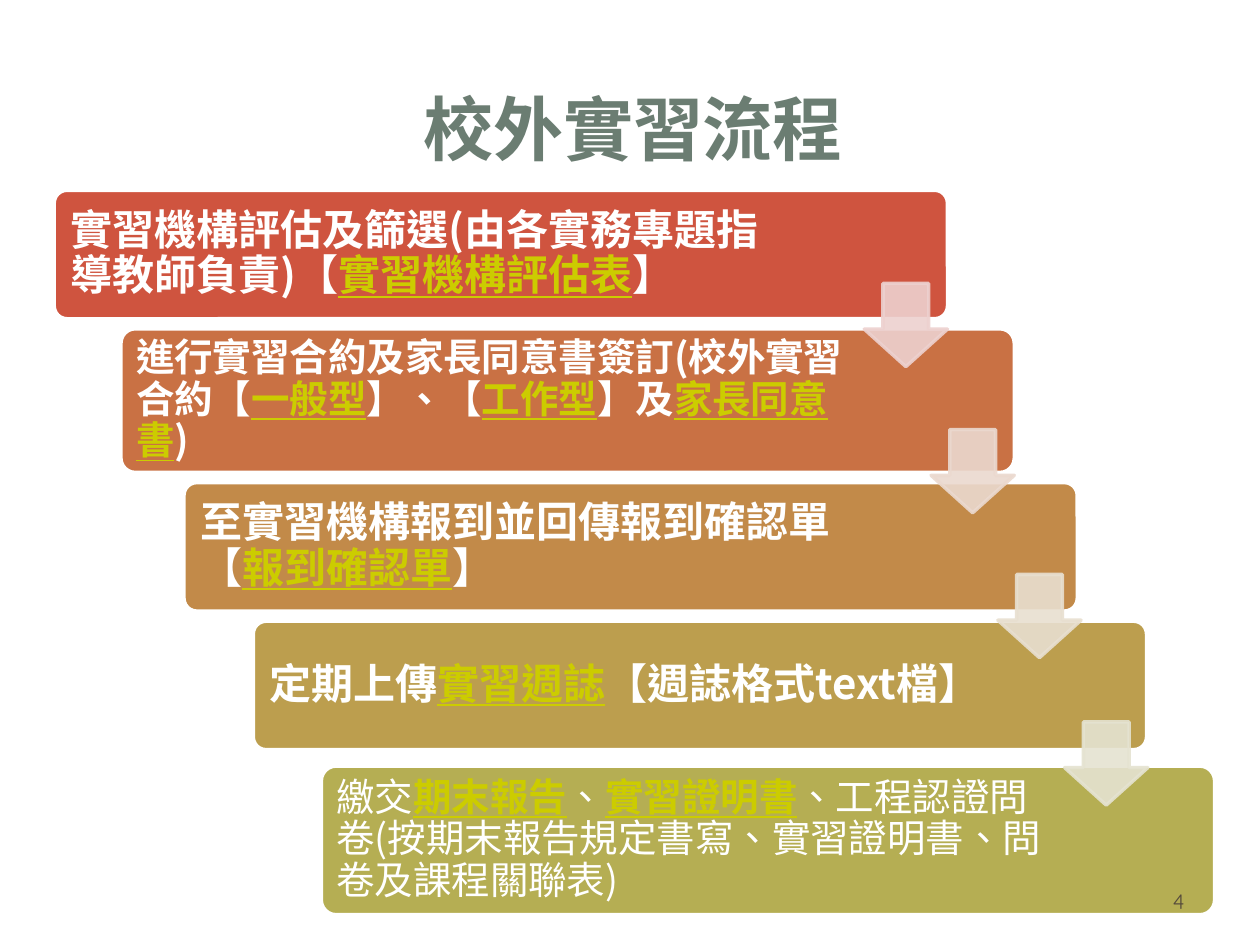
from lxml import etree
from pptx import Presentation
from pptx.dml.color import RGBColor
from pptx.enum import lang, shapes, text
from pptx.oxml import ns
from pptx.util import Inches, Pt

CJK_FONT = "Noto Sans CJK SC"
NUMBER_FONT = "Quicksand"
WHITE = RGBColor(0xFF, 0xFF, 0xFF)
TITLE_GREEN = RGBColor(0x6B, 0x7D, 0x72)
LINK_YELLOW = RGBColor(0xCC, 0xCC, 0x00)
NUMBER_BROWN = RGBColor(0x56, 0x4B, 0x3C)

STEP_WIDTH = 7.09
ARROW_SIZE = 0.66

# left, top, height, fill, text size, plain text bold, wording ([...] is a link)
STEPS = [
    (0.43, 1.51, 1.02, RGBColor(0xCF, 0x54, 0x3F), 24, True,
     "實習機構評估及篩選(由各實務專題指導教師負責)【[實習機構評估表]】"),
    (0.96, 2.61, 1.14, RGBColor(0xC9, 0x71, 0x44), 22, True,
     "進行實習合約及家長同意書簽訂(校外實習合約【[一般型]】、【[工作型]】及[家長同意書])"),
    (1.46, 3.83, 1.02, RGBColor(0xC2, 0x8A, 0x49), 24, True,
     "至實習機構報到並回傳報到確認單【[報到確認單]】"),
    (2.01, 4.93, 1.02, RGBColor(0xBC, 0x9E, 0x4E), 24, True,
     "定期上傳[實習週誌]【週誌格式text檔】"),
    (2.55, 6.08, 1.18, RGBColor(0xB5, 0xAE, 0x53), 22, False,
     "繳交[期末報告]、[實習證明書]、工程認證問卷"
     "(按期末報告規定書寫、實習證明書、問卷及課程關聯表)"),
]
# top and colour of the arrow leading out of each step
ARROWS = [
    (2.25, RGBColor(0xED, 0xD1, 0xCF)),
    (3.41, RGBColor(0xEB, 0xD9, 0xCF)),
    (4.56, RGBColor(0xE8, 0xDF, 0xD0)),
    (5.73, RGBColor(0xE5, 0xE3, 0xD1)),
]
ARROW_LEFT, ARROW_SHIFT = 6.86, 0.53


def add_run(paragraph, wording, size, color, bold=False, underline=False, font=CJK_FONT):
    run = paragraph.add_run()
    run.text = wording
    run.font.name = font
    run.font.size = Pt(size)
    run.font.bold = bold
    run.font.underline = underline
    run.font.color.rgb = color
    run.font.language_id = lang.MSO_LANGUAGE_ID.TRADITIONAL_CHINESE
    # East Asian glyphs take their font from a:ea
    latin = run.font._element.find(ns.qn("a:latin"))
    east_asian = etree.Element(ns.qn("a:ea"), typeface=font)
    latin.addnext(east_asian)


def add_text_box(slide, left, top, width, height, inset=None):
    box = slide.shapes.add_textbox(Inches(left), Inches(top), Inches(width), Inches(height))
    frame = box.text_frame
    frame.word_wrap = True
    frame.vertical_anchor = text.MSO_ANCHOR.MIDDLE
    if inset is not None:
        frame.margin_left = frame.margin_right = Inches(inset)
        frame.margin_top = frame.margin_bottom = Inches(inset)
    return frame.paragraphs[0]


def add_block(slide, preset, left, top, width, height, color, line_color, adjustments):
    block = slide.shapes.add_shape(
        preset, Inches(left), Inches(top), Inches(width), Inches(height))
    block.shadow.inherit = False
    block.fill.solid()
    block.fill.fore_color.rgb = color
    block.line.color.rgb = line_color
    block.line.width = Pt(2)
    for index, value in enumerate(adjustments):
        block.adjustments[index] = value
    return block


def add_title(slide, left, top, width, height):
    title = add_text_box(slide, left, top, width, height)
    title.alignment = text.PP_ALIGN.CENTER
    add_run(title, "校外實習流程", 40, TITLE_GREEN, bold=True)


def add_step(slide, left, top, height, color, size, bold, wording):
    add_block(slide, shapes.MSO_SHAPE.ROUNDED_RECTANGLE,
              left, top, STEP_WIDTH, height, color, WHITE, [0.1])
    inset = 0.1 if size == 24 else 0.09
    label = add_text_box(slide, left + 0.03, top + 0.03, 5.84, height - 0.06, inset)
    label.line_spacing = 0.9
    # Odd pieces lie between brackets and are links
    for index, piece in enumerate(wording.replace("]", "[").split("[")):
        is_link = index % 2 == 1
        add_run(label, piece, size, LINK_YELLOW if is_link else WHITE,
                bold=bold or is_link, underline=is_link)


def add_arrow(slide, left, top, color):
    arrow = add_block(slide, shapes.MSO_SHAPE.DOWN_ARROW,
                      left, top, ARROW_SIZE, ARROW_SIZE, color, color, [0.55, 0.45])
    # Fill and outline are both 90 % opaque
    for rgb in arrow._element.spPr.iter(ns.qn("a:srgbClr")):
        etree.SubElement(rgb, ns.qn("a:alpha"), val="90000")


def add_page_number(slide, left, top, width, height):
    number = add_text_box(slide, left, top, width, height)
    number.alignment = text.PP_ALIGN.RIGHT
    add_run(number, "4", 12, NUMBER_BROWN, font=NUMBER_FONT)


def main():
    deck = Presentation()
    deck.slide_width, deck.slide_height = Inches(10), Inches(7.5)
    slide = deck.slides.add_slide(deck.slide_layouts[6])

    add_title(slide, 0.51, 0.44, 9.03, 1.14)
    for step in STEPS:
        add_step(slide, *step)
    for index, (top, color) in enumerate(ARROWS):
        add_arrow(slide, ARROW_LEFT + index * ARROW_SHIFT, top, color)
    add_page_number(slide, 7.17, 6.95, 2.33, 0.4)

    deck.save("out.pptx")


if __name__ == "__main__":
    main()
